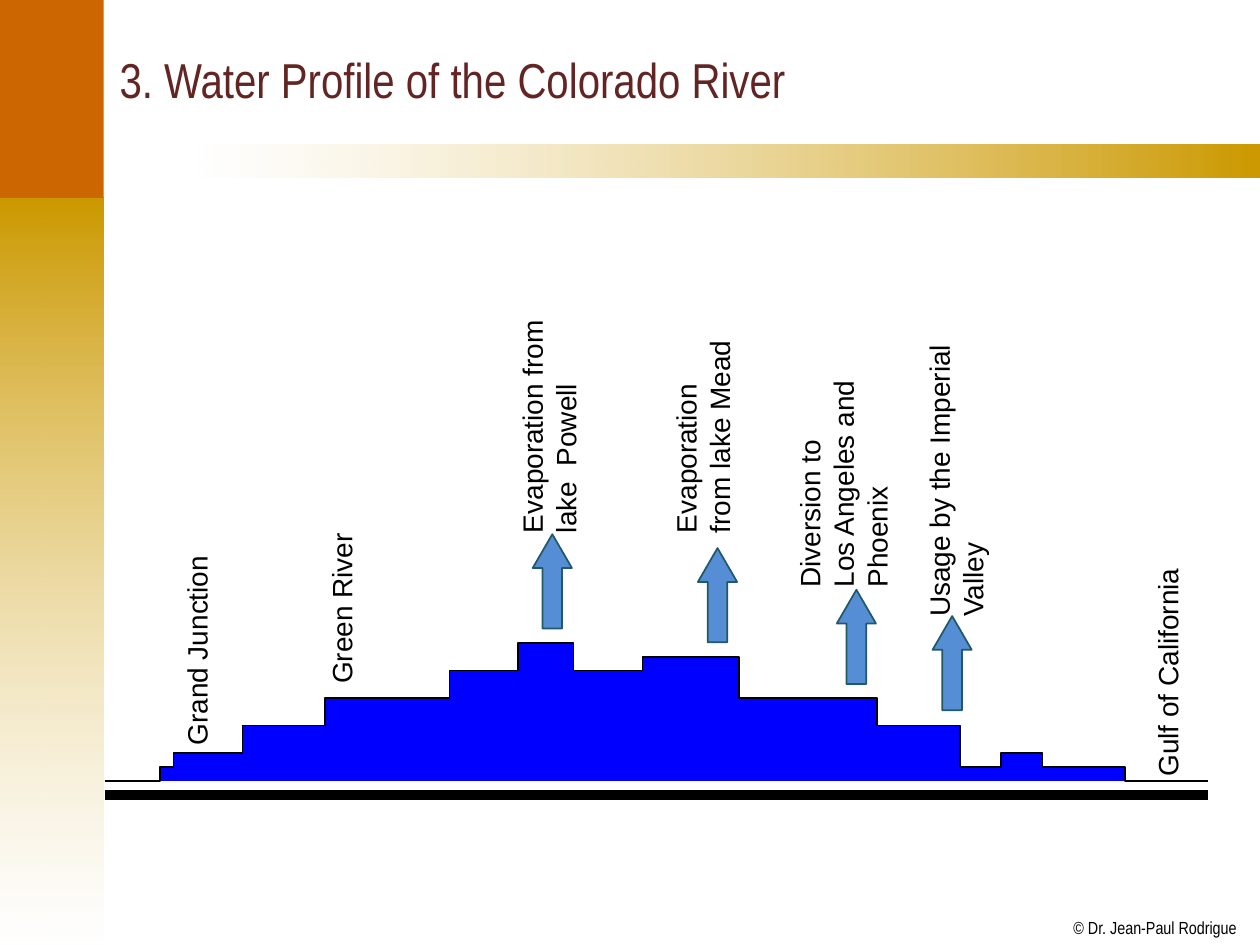
from lxml.etree import SubElement
from pptx import Presentation
from pptx.dml.color import RGBColor
from pptx.enum.shapes import MSO_CONNECTOR, MSO_SHAPE
from pptx.enum.text import MSO_ANCHOR, MSO_AUTO_SIZE, PP_ALIGN
from pptx.oxml.ns import qn
from pptx.util import Cm, Pt

COLORS = {
    "orange": "CC6600",
    "gold": "CC9900",
    "white": "FFFFFF",
    "title": "632523",
    "black": "000000",
    "water": "0000FF",
    "arrow": "558ED5",
    "arrow_line": "215968",
}

GRID = 0.278
PROFILE_LEFT = 2.11
PROFILE_BASE = 15.74
PROFILE_END = 80
RIVER_STEPS = [
    (4, 1), (5, 2), (10, 4), (16, 6), (25, 8), (30, 10), (34, 8), (39, 9),
    (46, 6), (56, 4), (62, 1), (65, 2), (68, 1), (74, 0),
]

LABELS = [
    (["Grand Junction"], 1.63, 12.47, 4.67, 0.94),
    (["Green River"], 5.03, 11.71, 3.71, 0.94),
    (["Evaporation from", "lake  Powell"], 8.48, 7.59, 5.18, 1.63),
    (["Evaporation\nfrom lake Mead"], 11.86, 7.87, 4.62, 1.63),
    (["Diversion to\nLos Angeles and\nPhoenix"], 14.48, 8.43, 5.03, 2.29),
    (["Usage by the Imperial", "Valley"], 16.1, 8.69, 6.35, 1.63),
    (["Gulf of California"], 20.98, 12.88, 5.11, 0.94),
]

ARROWS = [(10.74, 10.77), (14.07, 11.05), (16.87, 11.89), (18.8, 12.42)]


def color(name):
    return RGBColor.from_string(COLORS[name])


def add_shape(slide, kind, left, top, width, height):
    shape = slide.shapes.add_shape(kind, Cm(left), Cm(top), Cm(width), Cm(height))
    shape.shadow.inherit = False
    shape.line.fill.background()
    return shape


def add_gradient_bar(slide, left, top, width, height, start, end, angle):
    shape = add_shape(slide, MSO_SHAPE.RECTANGLE, left, top, width, height)
    shape.fill.gradient()
    shape.fill.gradient_angle = angle
    for stop, name in zip(shape.fill.gradient_stops, (start, end)):
        stop.color.rgb = color(name)
    for element in shape._element.spPr.iter(qn("a:srgbClr")):
        if element.get("val") == COLORS["white"]:
            SubElement(element, qn("a:alpha"), val="50000")


def add_text(slide, paragraphs, left, top, width, height, size, font,
             color_name="black", wrap=False):
    box = slide.shapes.add_textbox(Cm(left), Cm(top), Cm(width), Cm(height))
    frame = box.text_frame
    frame.word_wrap = wrap
    frame.auto_size = MSO_AUTO_SIZE.NONE if wrap else MSO_AUTO_SIZE.SHAPE_TO_FIT_TEXT
    for index, text in enumerate(paragraphs):
        paragraph = frame.add_paragraph() if index else frame.paragraphs[0]
        paragraph.alignment = PP_ALIGN.LEFT
        for line_index, line in enumerate(text.split("\n")):
            if line_index:
                paragraph.add_line_break()
            run = paragraph.add_run()
            run.text = line
            run.font.size = Pt(size)
            run.font.name = font
            run.font.color.rgb = color(color_name)
    return box


def add_label(slide, paragraphs, left, top, width, height):
    box = add_text(slide, paragraphs, left, top, width, height, 16, "Arial")
    box.rotation = 270


def add_arrow(slide, left, top):
    arrow = add_shape(slide, MSO_SHAPE.UP_ARROW, left, top, 0.79, 1.9)
    arrow.adjustments[0] = 0.5
    arrow.adjustments[1] = 0.863
    arrow.fill.solid()
    arrow.fill.fore_color.rgb = color("arrow")
    arrow.line.color.rgb = color("arrow_line")
    arrow.line.width = Pt(1)


def add_river_bed(slide):
    bed = slide.shapes.add_connector(
        MSO_CONNECTOR.STRAIGHT, Cm(PROFILE_LEFT), Cm(16.03),
        Cm(PROFILE_LEFT + PROFILE_END * GRID), Cm(16.03))
    bed.line.color.rgb = color("black")
    bed.line.width = Pt(6)
    SubElement(bed._element.spPr, qn("a:effectLst"))


def add_river_profile(slide):
    points = []
    level = 0
    for column, next_level in RIVER_STEPS:
        points += [(column, -level), (column, -next_level)]
        level = next_level
    points.append((PROFILE_END, 0))
    builder = slide.shapes.build_freeform(0, 0, scale=Cm(GRID))
    builder.add_line_segments(points, close=False)
    profile = builder.convert_to_shape(Cm(PROFILE_LEFT), Cm(PROFILE_BASE))
    profile.shadow.inherit = False
    profile.fill.solid()
    profile.fill.fore_color.rgb = color("water")
    profile.line.color.rgb = color("black")
    profile.line.width = Pt(1)


def add_frame(slide):
    add_gradient_bar(slide, -0.02, 3.99, 2.11, 15.06, "gold", "white", 270)
    add_gradient_bar(slide, 3.99, 2.92, 21.41, 0.66, "white", "gold", 0)
    corner = add_shape(slide, MSO_SHAPE.RECTANGLE, -0.02, -0.02, 2.11, 4.01)
    corner.fill.solid()
    corner.fill.fore_color.rgb = color("orange")
    credit = add_text(slide, ["© Dr. Jean-Paul Rodrigue"], 21.64, 18.49, 3.3, 0.43,
                      10, "Arial Narrow").text_frame
    credit.margin_left = credit.margin_right = 0
    credit.margin_top = credit.margin_bottom = 0
    title = add_text(slide, ["3. Water Profile of the Colorado River"],
                     2.16, 0.28, 22.81, 2.64, 28, "Arial Narrow", "title", wrap=True)
    title.text_frame.vertical_anchor = MSO_ANCHOR.MIDDLE


def main():
    presentation = Presentation()
    presentation.slide_width = Cm(25.4)
    presentation.slide_height = Cm(19.05)
    slide = presentation.slides.add_slide(presentation.slide_layouts[6])
    add_frame(slide)
    add_river_bed(slide)
    add_river_profile(slide)
    for label in LABELS:
        add_label(slide, *label)
    for left, top in ARROWS:
        add_arrow(slide, left, top)
    presentation.save("out.pptx")


if __name__ == "__main__":
    main()
